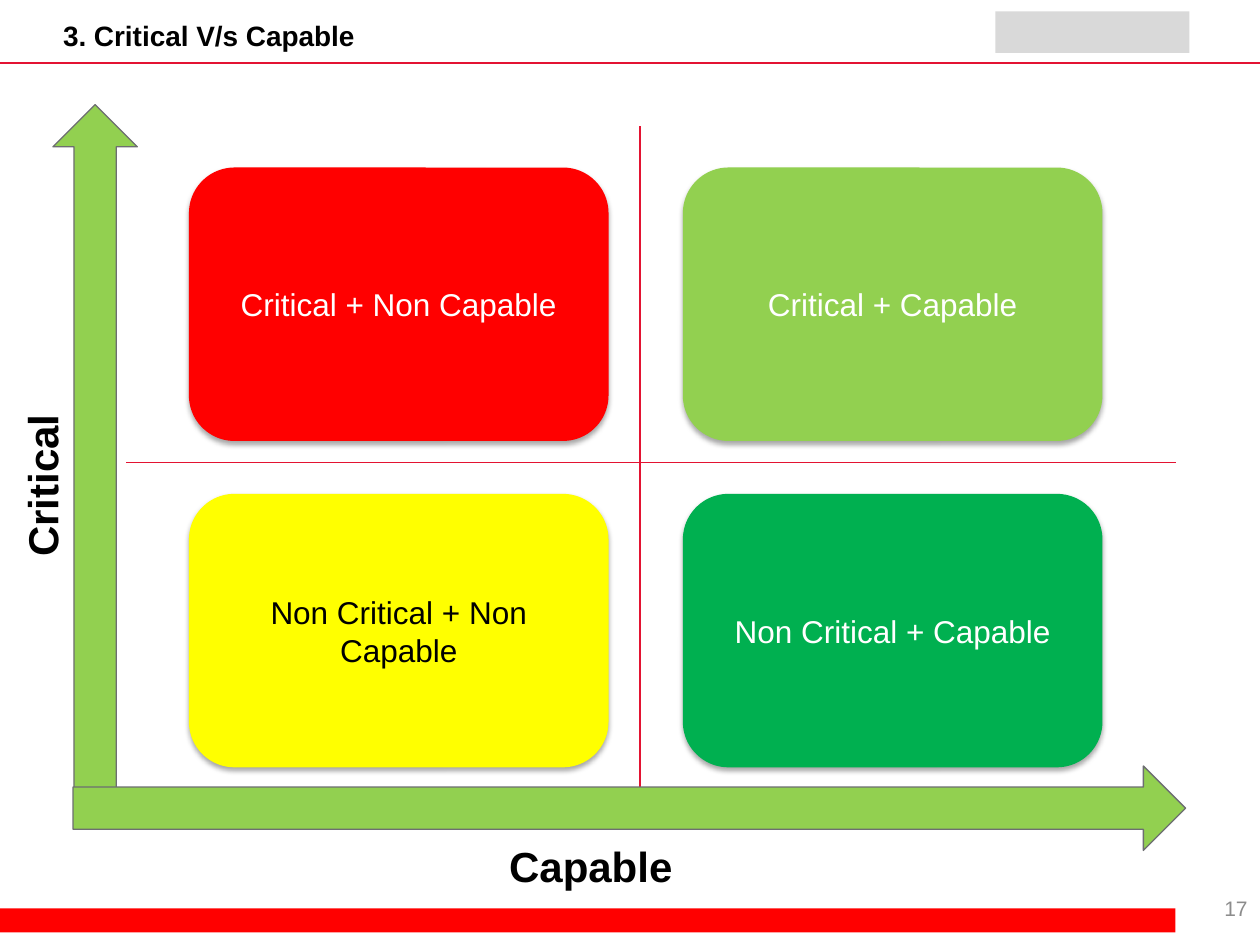
from dataclasses import dataclass

from lxml.etree import SubElement
from pptx import Presentation
from pptx.dml.color import RGBColor
from pptx.enum.shapes import MSO_CONNECTOR, MSO_SHAPE
from pptx.enum.text import MSO_ANCHOR, MSO_AUTO_SIZE, PP_ALIGN
from pptx.oxml.ns import qn
from pptx.util import Inches, Pt


@dataclass(frozen=True)
class Theme:
    font: str = "Arial"
    black: str = "000000"
    white: str = "FFFFFF"
    red: str = "FF0000"
    yellow: str = "FFFF00"
    light_green: str = "92D050"
    green: str = "00B050"
    rule: str = "E31332"
    outline: str = "6D6E71"
    number: str = "8C8C8C"
    logo: str = "D9D9D9"
    title_size: int = 16
    axis_size: int = 24
    card_size: int = 18
    number_size: int = 12
    line_width: float = 0.75


THEME = Theme()


def inches(*lengths):
    return [Inches(length) for length in lengths]


def add_span(para, text, size, color, bold=False):
    span = para.add_run()
    span.text = text
    span.font.name = THEME.font
    span.font.size = Pt(size)
    span.font.bold = bold
    span.font.color.rgb = RGBColor.from_string(color)


def add_block(page, kind, place, fill, outline=None):
    block = page.shapes.add_shape(kind, *inches(*place))
    block.shadow.inherit = False
    block.fill.solid()
    block.fill.fore_color.rgb = RGBColor.from_string(fill)
    if outline:
        block.line.color.rgb = RGBColor.from_string(outline)
        block.line.width = Pt(THEME.line_width)
    else:
        block.line.fill.background()
    return block


def add_soft_shadow(block):
    effects = block.element.spPr.find(qn("a:effectLst"))
    shadow = SubElement(effects, qn("a:outerShdw"), blurRad=str(Pt(3.1)),
                        dist=str(Pt(1.8)), dir="5400000", rotWithShape="0")
    color = SubElement(shadow, qn("a:srgbClr"), val=THEME.black)
    SubElement(color, qn("a:alpha"), val="35000")


def add_card(page, place, text, fill, color):
    card = add_block(page, MSO_SHAPE.ROUNDED_RECTANGLE, place, fill)
    add_soft_shadow(card)
    frame = card.text_frame
    frame.word_wrap = True
    frame.vertical_anchor = MSO_ANCHOR.MIDDLE
    para = frame.paragraphs[0]
    para.alignment = PP_ALIGN.CENTER
    add_span(para, text, THEME.card_size, color)


def add_label(page, place, text, size, rotation=0):
    """Add a bold one-line label whose box hugs its text."""
    box = page.shapes.add_textbox(*inches(*place))
    box.rotation = rotation
    frame = box.text_frame
    frame.margin_left = frame.margin_right = 0
    frame.margin_top = frame.margin_bottom = 0
    frame.word_wrap = False
    frame.auto_size = MSO_AUTO_SIZE.SHAPE_TO_FIT_TEXT
    add_span(frame.paragraphs[0], text, size, THEME.black, bold=True)


def add_rule(page, start, end):
    rule = page.shapes.add_connector(MSO_CONNECTOR.STRAIGHT, *inches(*start, *end))
    rule.line.color.rgb = RGBColor.from_string(THEME.rule)
    rule.line.width = Pt(THEME.line_width)
    SubElement(rule.element.spPr, qn("a:effectLst"))


def add_page_number(page, number):
    box = page.shapes.add_textbox(*inches(7.92, 6.96, 2.08, 0.5))
    frame = box.text_frame
    frame.word_wrap = True
    frame.vertical_anchor = MSO_ANCHOR.MIDDLE
    para = frame.paragraphs[0]
    para.alignment = PP_ALIGN.RIGHT
    add_span(para, number, THEME.number_size, THEME.number)


def add_page_frame(page):
    """Add the logo placeholder, header rule, footer bar, number and title."""
    add_block(page, MSO_SHAPE.RECTANGLE, (7.9, 0.09, 1.54, 0.33), THEME.logo)
    add_block(page, MSO_SHAPE.RECTANGLE, (0, 7.21, 9.33, 0.19), THEME.red)
    add_rule(page, (0, 0.5), (10, 0.5))
    add_page_number(page, "17")
    add_label(page, (0.5, 0.15, 2.35, 0.27), "3. Critical V/s Capable",
              THEME.title_size)


def add_axes(page):
    for kind, place in (
        (MSO_SHAPE.UP_ARROW, (0.42, 0.83, 0.67, 5.75)),
        (MSO_SHAPE.RIGHT_ARROW, (0.58, 6.08, 8.83, 0.67)),
    ):
        add_block(page, kind, place, THEME.light_green, THEME.outline)
    add_label(page, (4.04, 6.67, 1.31, 0.4), "Capable", THEME.axis_size)
    add_label(page, (-0.24, 3.65, 1.14, 0.4), "Critical", THEME.axis_size, 270)


def add_quadrants(page):
    lefts, tops = (1.5, 5.42), (1.33, 3.92)
    cards = (
        (0, 0, "Critical + Non Capable", THEME.red, THEME.white),
        (0, 1, "Non Critical + Non Capable", THEME.yellow, THEME.black),
        (1, 0, "Critical + Capable", THEME.light_green, THEME.white),
        (1, 1, "Non Critical + Capable", THEME.green, THEME.white),
    )
    for column, row, text, fill, color in cards:
        place = (lefts[column], tops[row], 3.33, 2.17)
        add_card(page, place, text, fill, color)
    add_rule(page, (5.08, 1), (5.08, 6.25))
    add_rule(page, (1, 3.67), (9.33, 3.67))


def main():
    deck = Presentation()
    deck.slide_width, deck.slide_height = inches(10, 7.5)
    page = deck.slides.add_slide(deck.slide_layouts[6])
    add_page_frame(page)
    # The arrows go last so that the capable axis covers the vertical divider.
    add_quadrants(page)
    add_axes(page)
    deck.save("out.pptx")


if __name__ == "__main__":
    main()
